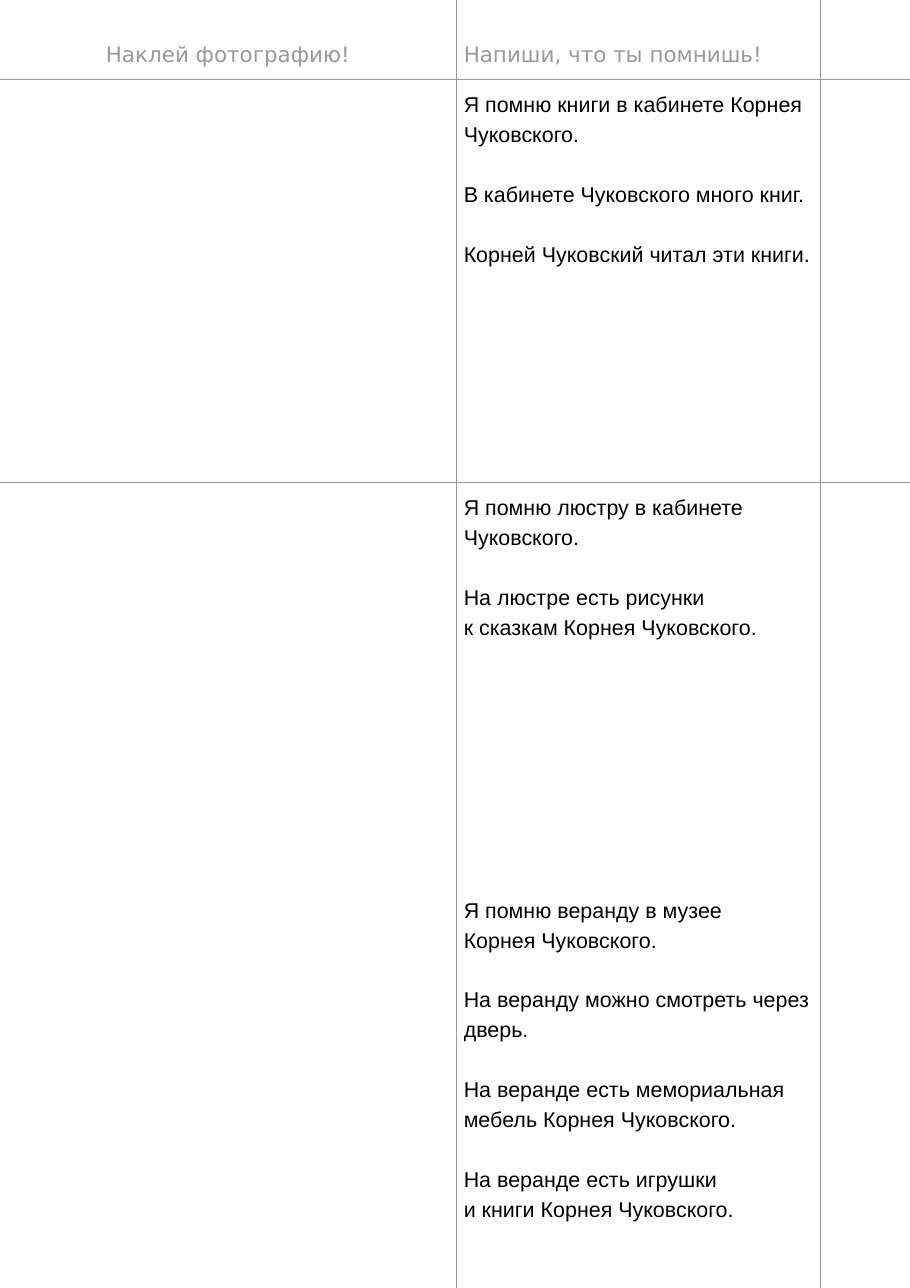
from lxml import etree
from pptx import Presentation
from pptx.dml.color import RGBColor
from pptx.enum.text import PP_ALIGN
from pptx.oxml.ns import qn
from pptx.util import Inches, Pt

LEFT, CENTER = PP_ALIGN.LEFT, PP_ALIGN.CENTER
WIDTH, HEIGHT = 8.26, 11.69
HEADER_HEIGHT = 0.72
COLUMNS = [4.14, 3.31, 0.81]
MEMORY_ROWS = 3
MARGIN, HEADER_TOP = 0.07, 0.34
LINE_PT = 19.6
COLORS = {"grey": "999999", "black": "000000", "white": "FFFFFF"}
MEMORIES = [
    ["Я помню книги в кабинете Корнея Чуковского.",
     "В кабинете Чуковского много книг.",
     "Корней Чуковский читал эти книги."],
    ["Я помню люстру в кабинете Чуковского.",
     "На люстре есть рисунки\nк сказкам Корнея Чуковского."],
    ["Я помню веранду в музее\nКорнея Чуковского.",
     "На веранду можно смотреть через дверь.",
     "На веранде есть мемориальная мебель Корнея Чуковского.",
     "На веранде есть игрушки\nи книги Корнея Чуковского."],
]


def set_border(cell, edge, visible):
    """Draw one cell edge in grey, or leave it empty."""
    ln = etree.SubElement(cell._tc.get_or_add_tcPr(), qn(f"a:ln{edge}"))
    if visible:
        ln.set("w", str(Pt(0.53)))
        fill = etree.SubElement(ln, qn("a:solidFill"))
        etree.SubElement(fill, qn("a:srgbClr"), val=COLORS["grey"])
    else:
        ln.set("w", "0")
        etree.SubElement(ln, qn("a:noFill"))


def style_cell(cell, row, col):
    """Set the rules, fill and margins of a cell."""
    edges = {"L": col > 0, "R": col < len(COLUMNS) - 1,
             "T": row in (1, 2), "B": row in (0, 1)}
    for edge, visible in edges.items():
        set_border(cell, edge, visible)
    cell.fill.solid()
    cell.fill.fore_color.rgb = RGBColor.from_string(COLORS["white"])
    cell.margin_left = cell.margin_right = Inches(MARGIN)
    cell.margin_bottom = Inches(MARGIN)
    cell.margin_top = Inches(MARGIN if row else HEADER_TOP)


def write_cell(cell, statements, font, color, align=LEFT):
    """Write statements as paragraphs set one line apart."""
    tf = cell.text_frame
    for i, statement in enumerate(statements):
        p = tf.add_paragraph() if i else tf.paragraphs[0]
        p.alignment = align
        p.line_spacing = Pt(LINE_PT)
        p.space_before = Pt(LINE_PT if i else 0)
        for j, line in enumerate(statement.split("\n")):
            if j:
                p.add_line_break()
            r = p.add_run()
            r.text = line
            r.font.name = font
            r.font.size = Pt(14)
            r.font.color.rgb = RGBColor.from_string(COLORS[color])


def add_memory_table(s):
    """Add the ruled page-wide table and return it."""
    table = s.shapes.add_table(MEMORY_ROWS + 1, len(COLUMNS), 0, 0,
                               Inches(WIDTH), Inches(HEIGHT)).table
    table.first_row = table.horz_banding = False
    for column, width in zip(table.columns, COLUMNS):
        column.width = Inches(width)
    memory_height = (HEIGHT - HEADER_HEIGHT) / MEMORY_ROWS
    for i, row in enumerate(table.rows):
        row.height = Inches(memory_height if i else HEADER_HEIGHT)
        for j, cell in enumerate(row.cells):
            style_cell(cell, i, j)
    return table


def main():
    """Build the memory page and save it."""
    prs = Presentation()
    prs.slide_width, prs.slide_height = Inches(WIDTH), Inches(HEIGHT)
    s = prs.slides.add_slide(prs.slide_layouts[6])
    table = add_memory_table(s)
    write_cell(table.cell(0, 0), ["Наклей фотографию!"], "DejaVu Sans", "grey", CENTER)
    write_cell(table.cell(0, 1), ["Напиши, что ты помнишь!"], "DejaVu Sans", "grey")
    for i, statements in enumerate(MEMORIES, 1):
        write_cell(table.cell(i, 1), statements, "Arial", "black")
    prs.save("out.pptx")


if __name__ == "__main__":
    main()
